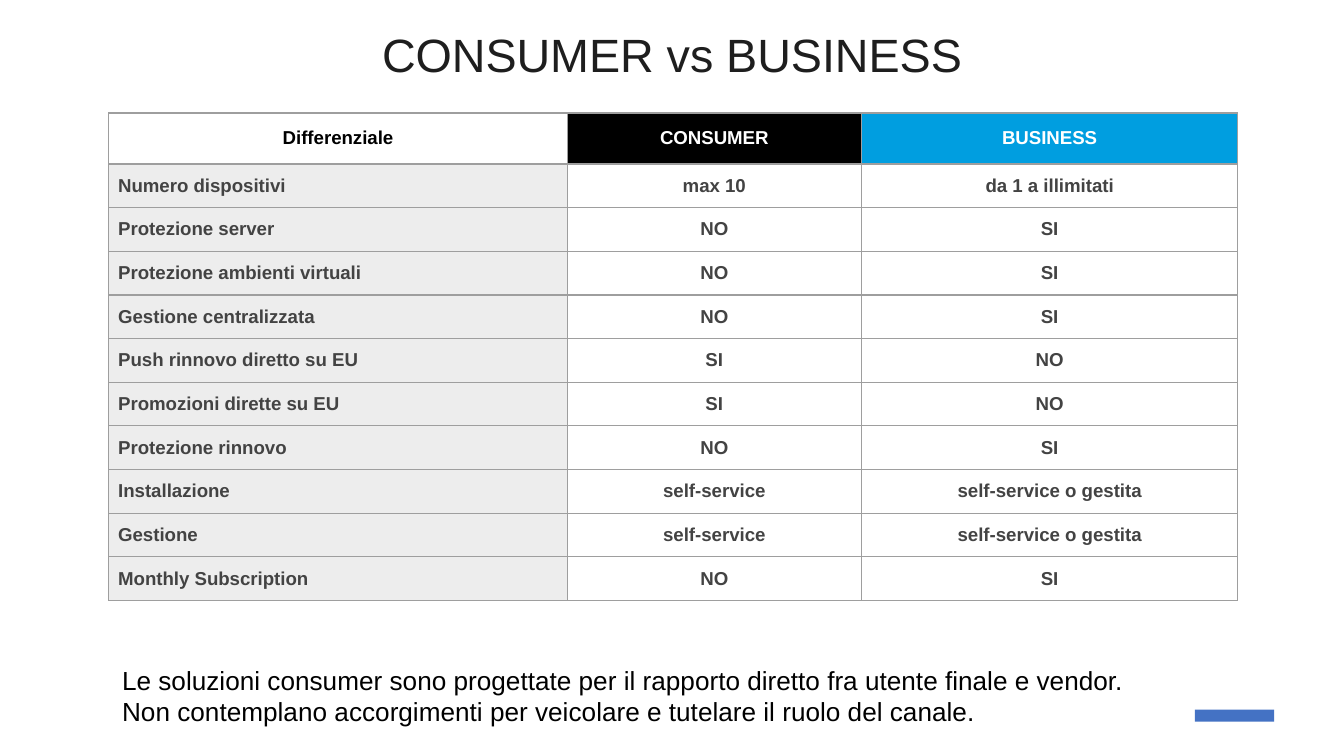
from dataclasses import dataclass

from lxml import etree
from pptx import Presentation
from pptx import util as u
from pptx.dml.color import RGBColor
from pptx.enum import shapes, text
from pptx.oxml.ns import qn

# Content
TITLE = "CONSUMER vs BUSINESS"
HEADER = ("Differenziale", "CONSUMER", "BUSINESS")
FEATURES = [
    ("Numero dispositivi", "max 10", "da 1 a illimitati"),
    ("Protezione server", "NO", "SI"),
    ("Protezione ambienti virtuali", "NO", "SI"),
    ("Gestione centralizzata", "NO", "SI"),
    ("Push rinnovo diretto su EU", "SI", "NO"),
    ("Promozioni dirette su EU", "SI", "NO"),
    ("Protezione rinnovo", "NO", "SI"),
    ("Installazione", "self-service", "self-service o gestita"),
    ("Gestione", "self-service", "self-service o gestita"),
    ("Monthly Subscription", "NO", "SI"),
]
NOTE = (
    "Le soluzioni consumer sono progettate per il rapporto diretto fra utente finale e vendor.",
    "Non contemplano accorgimenti per veicolare e tutelare il ruolo del canale.",
)


@dataclass(frozen=True)
class Theme:
    font: str = "Arial"
    title_size: int = 25
    note_size: int = 14
    table_size: int = 10
    title: str = "1E1E1E"
    black: str = "000000"
    white: str = "FFFFFF"
    blue: str = "009EE0"
    body: str = "434343"
    label_fill: str = "EDEDED"
    border: str = "9E9E9E"
    mark: str = "4472C4"


THEME = Theme()
HEADER_STYLE = [(None, THEME.black), (THEME.black, THEME.white), (THEME.blue, THEME.white)]

# Layout, in inches, on a 16:9 slide
WIDTH = 10
HEIGHT = WIDTH * 9 / 16
LEFT, TABLE_TOP = 0.81, 0.84
COLUMNS = (3.41, 2.19, 2.8)
HEADER_ROW, FEATURE_ROWS = 0.38, 3.25
CELL_INSET = 0.07


def box(*lengths):
    return [u.Inches(length) for length in lengths]


def add_run(paragraph, words, size, color, bold=False):
    run = paragraph.add_run()
    run.text = words
    run.font.name = THEME.font
    run.font.size = u.Pt(size)
    run.font.bold = bold
    run.font.color.rgb = RGBColor.from_string(color)


def set_insets(frame, across, down):
    frame.margin_left = frame.margin_right = u.Inches(across)
    frame.margin_top = frame.margin_bottom = u.Inches(down)


def add_borders(cell):
    properties = cell._tc.get_or_add_tcPr()
    for side in ("lnL", "lnR", "lnT", "lnB"):
        line = etree.SubElement(properties, qn(f"a:{side}"), w=str(u.Pt(0.75)))
        fill = etree.SubElement(line, qn("a:solidFill"))
        etree.SubElement(fill, qn("a:srgbClr"), val=THEME.border)


def fill_cell(cell, words, fill, color, align):
    set_insets(cell, CELL_INSET, CELL_INSET)
    cell.vertical_anchor = text.MSO_ANCHOR.MIDDLE
    add_borders(cell)
    if fill:
        cell.fill.solid()
        cell.fill.fore_color.rgb = RGBColor.from_string(fill)
    else:
        cell.fill.background()
    paragraph = cell.text_frame.paragraphs[0]
    paragraph.alignment = align
    add_run(paragraph, words, THEME.table_size, color, bold=True)


def add_title(slide):
    title = slide.shapes.title
    title.left, title.top, title.width, title.height = box(0, 0.2, WIDTH, 0.4)
    frame = title.text_frame
    frame.auto_size = text.MSO_AUTO_SIZE.NONE
    frame.vertical_anchor = text.MSO_ANCHOR.TOP
    set_insets(frame, 0.08, 0.04)
    paragraph = frame.paragraphs[0]
    paragraph.alignment = text.PP_ALIGN.CENTER
    paragraph.line_spacing = 0.9
    add_run(paragraph, TITLE, THEME.title_size, THEME.title)


def add_comparison(slide):
    area = box(LEFT, TABLE_TOP, sum(COLUMNS), HEADER_ROW + FEATURE_ROWS)
    table = slide.shapes.add_table(len(FEATURES) + 1, len(COLUMNS), *area).table
    table.first_row = table.horz_banding = False
    for column, width in zip(table.columns, COLUMNS):
        column.width = u.Inches(width)
    for index, row in enumerate(table.rows):
        row.height = u.Inches(FEATURE_ROWS / len(FEATURES) if index else HEADER_ROW)

    center, left = text.PP_ALIGN.CENTER, text.PP_ALIGN.LEFT
    for col, (words, (fill, color)) in enumerate(zip(HEADER, HEADER_STYLE)):
        fill_cell(table.cell(0, col), words, fill, color, center)
    for row, feature in enumerate(FEATURES, start=1):
        for col, words in enumerate(feature):
            fill = THEME.white if col else THEME.label_fill
            fill_cell(table.cell(row, col), words, fill, THEME.body, center if col else left)


def add_note(slide):
    frame = slide.shapes.add_textbox(*box(LEFT, 4.84, 8.41, 0.72)).text_frame
    frame.word_wrap = True
    set_insets(frame, 0.1, 0.1)
    paragraph = frame.paragraphs[0]
    for index, line in enumerate(NOTE):
        if index:
            paragraph.add_line_break()
        add_run(paragraph, line, THEME.note_size, THEME.black)


def add_brand_mark(slide):
    mark = slide.shapes.add_shape(shapes.MSO_SHAPE.RECTANGLE, *box(8.89, 5.28, 0.59, 0.09))
    mark.shadow.inherit = False
    mark.fill.solid()
    mark.fill.fore_color.rgb = RGBColor.from_string(THEME.mark)
    mark.line.fill.background()


def main():
    deck = Presentation()
    deck.slide_width, deck.slide_height = box(WIDTH, HEIGHT)
    slide = deck.slides.add_slide(deck.slide_layouts.get_by_name("Title Only"))
    add_brand_mark(slide)
    add_title(slide)
    add_note(slide)
    add_comparison(slide)
    deck.save("out.pptx")


if __name__ == "__main__":
    main()
